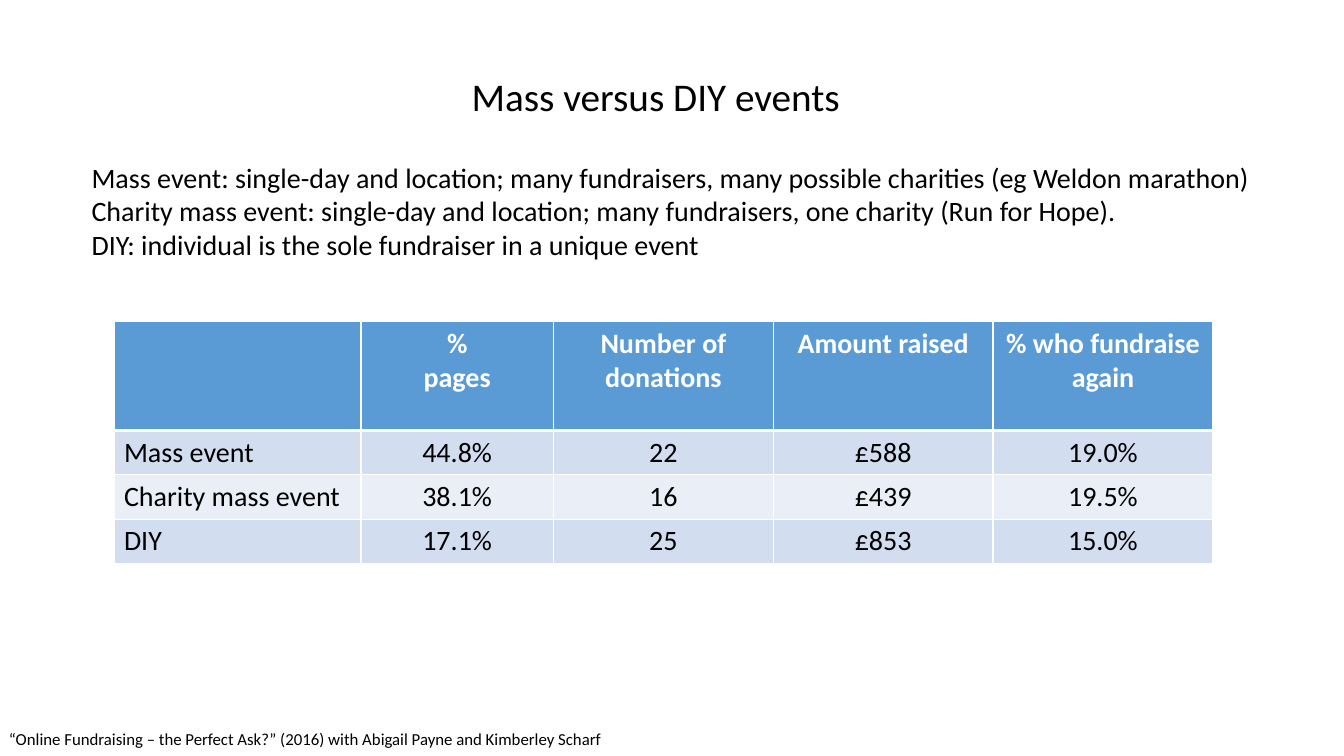
from pptx import Presentation
from pptx.dml.color import RGBColor
from pptx.enum.text import MSO_AUTO_SIZE, PP_ALIGN
from pptx.oxml import parse_xml
from pptx.oxml.ns import nsdecls
from pptx.util import Inches, Pt

COLORS = {
    "text": "000000",
    "white": "FFFFFF",
    "header": "5B9BD5",
    "odd_row": "D2DEEF",
    "even_row": "EAEFF7",
}


def write_lines(text_frame, lines, size, color="text", bold=False, align=PP_ALIGN.LEFT):
    for index, line in enumerate(lines):
        paragraph = text_frame.paragraphs[0] if index == 0 else text_frame.add_paragraph()
        paragraph.alignment = align
        run = paragraph.add_run()
        run.text = line
        run.font.name = "Calibri"
        run.font.size = Pt(size)
        run.font.bold = bold
        run.font.color.rgb = RGBColor.from_string(COLORS[color])


def set_borders(cell, bottom_width):
    properties = cell._tc.get_or_add_tcPr()
    widths = {"lnL": 1, "lnR": 1, "lnT": 1, "lnB": bottom_width}
    for position, (side, width) in enumerate(widths.items()):
        border = parse_xml(
            f'<a:{side} {nsdecls("a")} w="{Pt(width)}"><a:solidFill>'
            f'<a:srgbClr val="{COLORS["white"]}"/></a:solidFill></a:{side}>'
        )
        properties.insert(position, border)


presentation = Presentation()
presentation.slide_width = Inches(13.33)
presentation.slide_height = Inches(7.5)
slide = presentation.slides.add_slide(presentation.slide_layouts[6])

# Table of event types
rows = [
    [[], ["%", "pages"], ["Number of donations"], ["Amount raised"], ["% who fundraise again"]],
    [["Mass event"], ["44.8%"], ["22"], ["£588"], ["19.0%"]],
    [["Charity mass event"], ["38.1%"], ["16"], ["£439"], ["19.5%"]],
    [["DIY"], ["17.1%"], ["25"], ["£853"], ["15.0%"]],
]
column_widths = [2.45, 1.91, 2.18, 2.18, 2.18]
row_heights = [1.08, 0.41, 0.41, 0.41]
table = slide.shapes.add_table(
    len(rows), len(column_widths), Inches(1.13), Inches(3.19), Inches(10.9), Inches(2.31)
).table
for column, width in zip(table.columns, column_widths):
    column.width = Inches(width)
for row, height in zip(table.rows, row_heights):
    row.height = Inches(height)

for row_index, row in enumerate(rows):
    is_header = row_index == 0
    fill = "header" if is_header else "odd_row" if row_index % 2 else "even_row"
    for column_index, lines in enumerate(row):
        cell = table.cell(row_index, column_index)
        cell.fill.solid()
        cell.fill.fore_color.rgb = RGBColor.from_string(COLORS[fill])
        set_borders(cell, 3 if is_header else 1)
        write_lines(
            cell.text_frame, lines, 20, "white" if is_header else "text", is_header,
            PP_ALIGN.CENTER if column_index else PP_ALIGN.LEFT,
        )

# Definitions of the event types
definitions = slide.shapes.add_textbox(Inches(0.81), Inches(1.54), Inches(11.7), Inches(1.45))
definitions.text_frame.word_wrap = False
write_lines(definitions.text_frame, [
    "Mass event: single-day and location; many fundraisers, many possible charities (eg Weldon marathon)",
    "Charity mass event: single-day and location; many fundraisers, one charity (Run for Hope).",
    "DIY: individual is the sole fundraiser in a unique event",
], 20)

# Title
title = slide.shapes.add_textbox(Inches(4.58), Inches(0.72), Inches(8.5), Inches(1.25))
title.text_frame.word_wrap = True
write_lines(title.text_frame, ["Mass versus DIY events"], 28)
title.text_frame.paragraphs[0].line_spacing = 0.9

# Citation
citation = slide.shapes.add_textbox(Inches(-0.01), Inches(7.18), Inches(9.22), Inches(0.3))
citation.text_frame.word_wrap = True
citation.text_frame.auto_size = MSO_AUTO_SIZE.SHAPE_TO_FIT_TEXT
write_lines(citation.text_frame, [
    "“Online Fundraising – the Perfect Ask?” (2016) with Abigail Payne and Kimberley Scharf",
], 12)

presentation.save("out.pptx")
